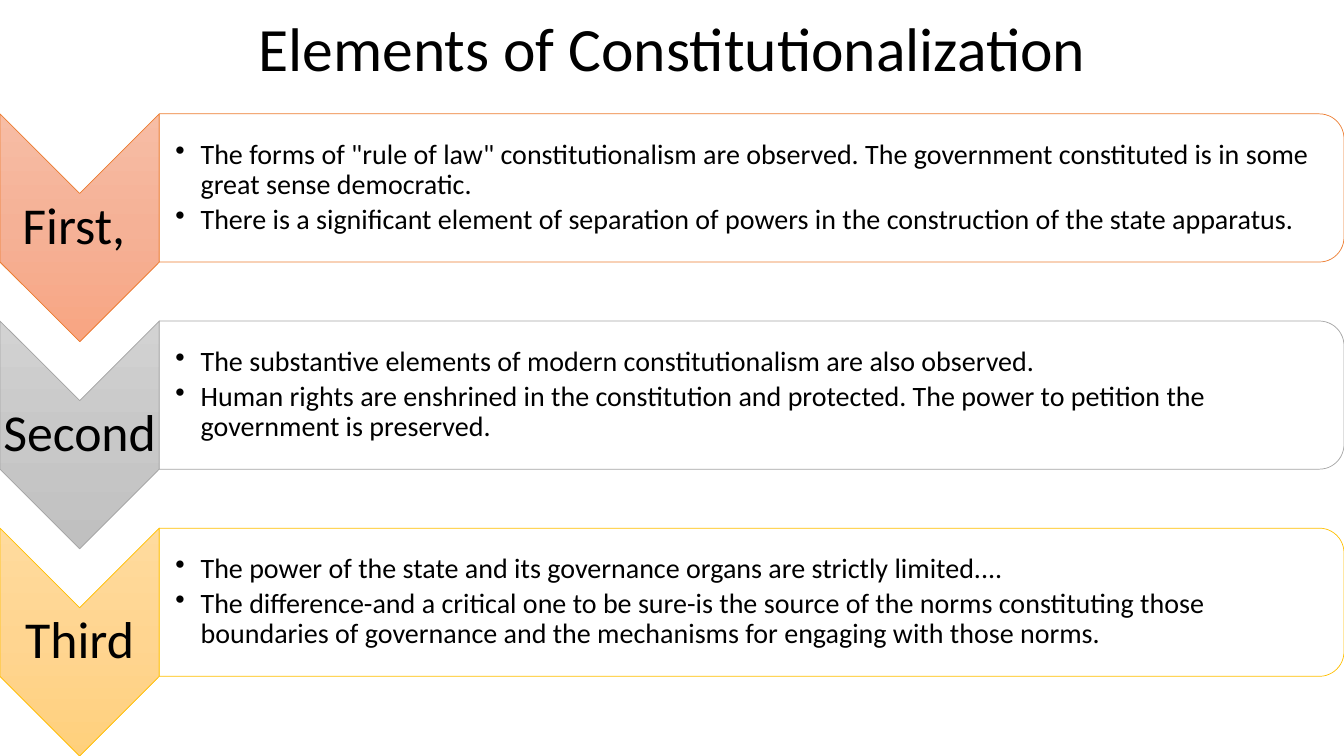
from lxml import etree
from pptx import Presentation
from pptx.dml.color import RGBColor as RGB
from pptx.enum.shapes import MSO_SHAPE as SHAPE
from pptx.enum.text import MSO_ANCHOR as ANCHOR, PP_ALIGN as ALIGN
from pptx.oxml import parse_xml
from pptx.oxml.ns import qn
from pptx.util import Inches, Pt

NS = "http://schemas.openxmlformats.org/drawingml/2006/main"
COLORS = {
    "text": "000000", "panel": "FFFFFF",
    "orange": "ED7D31", "gray": "A5A5A5", "gold": "FFC000",
}
FADES = {
    "orange": ("F7BDA5", "F5B196", "F8A582"),
    "gray": ("D2D2D2", "C8C8C8", "C0C0C0"),
    "gold": ("FFDB9E", "FFD590", "FFD07C"),
}
ROWS = [
    ("First, ", "orange", [
        'The forms of "rule of law" constitutionalism are observed. '
        "The government constituted is in some great sense democratic.",
        "There is a significant element of separation of powers in the "
        "construction of the state apparatus."]),
    ("Second", "gray", [
        "The substantive elements of modern constitutionalism are also observed.",
        "Human rights are enshrined in the constitution and protected. "
        "The power to petition the government is preserved."]),
    ("Third", "gold", [
        "The power of the state and its governance organs are strictly limited....",
        "The difference-and a critical one to be sure-is the source of the norms "
        "constituting those boundaries of governance and the mechanisms for "
        "engaging with those norms."]),
]
TOP, STEP = 1.13, 4.11 / 2
ARROW_W, ARROW_H = 1.58, 2.26
PANEL_W, PANEL_H = 11.75, 1.47


def apply(item, values):
    for name, value in values.items():
        setattr(item, name, value)


def write(frame, lines, size, bullet=False, **style):
    """Fill a text frame with one paragraph for each line."""
    for num, line in enumerate(lines):
        para = frame.paragraphs[0] if num == 0 else frame.add_paragraph()
        para.text = line
        apply(para, {"line_spacing": 0.9, **style})
        if bullet:
            props = para._p.get_or_add_pPr()
            props.set("marL", str(Inches(0.25)))
            props.set("indent", str(Inches(-0.25)))
            etree.SubElement(props, qn("a:buChar")).set("char", "•")
        apply(para.font, {"size": Pt(size), "name": "Calibri"})
        para.font.color.rgb = RGB.from_string(COLORS["text"])


def add_text(slide, box, lines, size, inset, pad, **style):
    """Add a middle-anchored text box; inset is its left margin, pad the others."""
    frame = slide.shapes.add_textbox(*map(Inches, box)).text_frame
    apply(frame, {
        "word_wrap": True, "vertical_anchor": ANCHOR.MIDDLE,
        "margin_left": Inches(inset), "margin_right": Inches(pad),
        "margin_top": Inches(pad), "margin_bottom": Inches(pad),
    })
    write(frame, lines, size, **style)


def add_turned(slide, kind, left, top, width, height, hue):
    """Add a shape turned by 90 degrees that covers the given box."""
    shift = (width - height) / 2
    box = left + shift, top - shift, height, width
    shape = slide.shapes.add_shape(kind, *map(Inches, box))
    shape.rotation = 90
    shape.shadow.inherit = False
    shape.line.color.rgb = RGB.from_string(COLORS[hue])
    shape.line.width = Pt(0.5)
    return shape


def fade(shape, shades):
    """Fill a shape with a gradient that runs down the slide."""
    stops = "".join(
        f'<a:gs pos="{num * 50000}"><a:srgbClr val="{shade}"/></a:gs>'
        for num, shade in enumerate(shades))
    grad = parse_xml(
        f'<a:gradFill xmlns:a="{NS}" rotWithShape="0"><a:gsLst>{stops}</a:gsLst>'
        '<a:lin ang="5400000" scaled="0"/></a:gradFill>')
    shape._element.spPr.find(qn("a:prstGeom")).addnext(grad)


def add_panel(slide, top, hue):
    panel = add_turned(slide, SHAPE.ROUND_2_SAME_RECTANGLE,
                       ARROW_W, top, PANEL_W, PANEL_H, hue)
    panel.fill.solid()
    panel.fill.fore_color.rgb = RGB.from_string(COLORS["panel"])
    color = panel._element.spPr.find(qn("a:solidFill"))[0]
    etree.SubElement(color, qn("a:alpha")).set("val", "90000")


def add_row(slide, top, label, hue, points):
    arrow = add_turned(slide, SHAPE.CHEVRON, 0, top, ARROW_W, ARROW_H, hue)
    fade(arrow, FADES[hue])
    add_text(slide, (0, top + 0.79, ARROW_W, 0.68), [label], 37, 0.03, 0.03,
             alignment=ALIGN.CENTER)
    add_panel(slide, top, hue)
    add_text(slide, (ARROW_W, top + 0.07, 11.68, 1.33), points, 20, 0.16, 0.01,
             bullet=True, level=1, space_after=Pt(3))


def add_title(slide, text):
    title = slide.shapes.title
    apply(title, {"left": Inches(0.92), "top": Inches(0),
                  "width": Inches(11.5), "height": Inches(1.03)})
    title.text_frame.vertical_anchor = ANCHOR.MIDDLE
    write(title.text_frame, [text], 44, alignment=ALIGN.CENTER)


def main():
    deck = Presentation()
    apply(deck, {"slide_width": Inches(13.33), "slide_height": Inches(7.5)})
    slide = deck.slides.add_slide(deck.slide_layouts[5])
    add_title(slide, "Elements of Constitutionalization")
    for num, row in enumerate(ROWS):
        add_row(slide, TOP + num * STEP, *row)
    deck.save("out.pptx")


if __name__ == "__main__":
    main()
